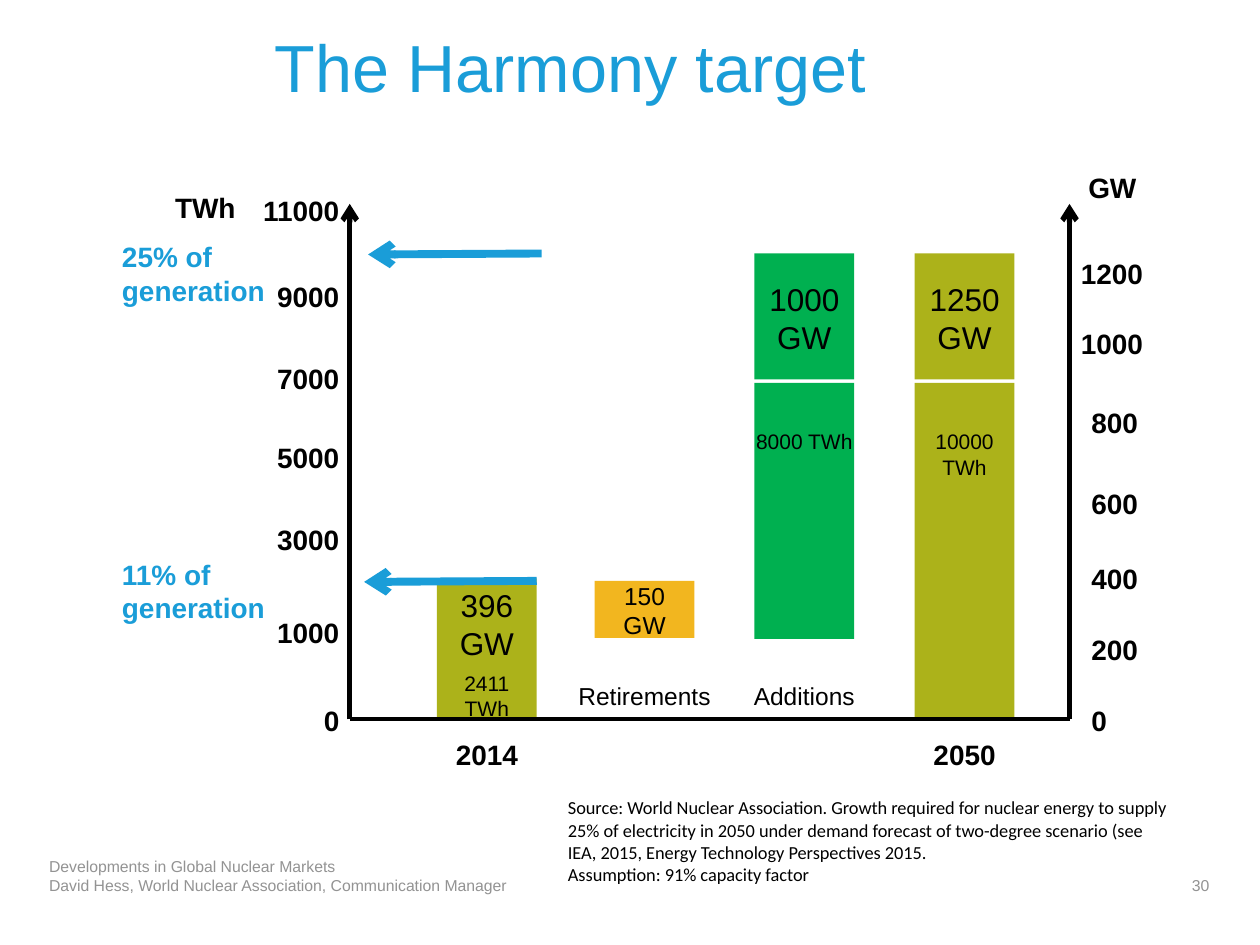
import pptx
import pptx.util
import pptx.dml.color
import pptx.enum.shapes
import pptx.enum.text
import pptx.oxml.ns
from lxml import etree
from pptx.util import Cm, Pt

ALIGN = pptx.enum.text.PP_ALIGN
ANCHOR = pptx.enum.text.MSO_ANCHOR

COLOURS = {"sky": "1A9DD8", "olive": "ACB21A", "green": "00B050",
           "amber": "F2B61F", "black": "000000", "grey": "939393"}
STYLES = {
    "title": ({"name": "Arial", "size": Pt(38)}, "sky"),
    "axis": ({"name": "Arial", "size": Pt(16), "bold": True}, "black"),
    "share": ({"name": "Arial", "size": Pt(16), "bold": True}, "sky"),
    "capacity": ({"name": "Arial", "size": Pt(18)}, "black"),
    "energy": ({"name": "Arial", "size": Pt(12)}, "black"),
    "step": ({"name": "Arial", "size": Pt(14)}, "black"),
    "source": ({"name": "Calibri", "size": Pt(10.5)}, "black"),
    "footer": ({"name": "Arial", "size": Pt(9)}, "grey"),
}

# All lengths below are in centimetres.
AXIS_LEFT, AXIS_RIGHT, AXIS_TOP, BASELINE = 7.05, 21.56, 4.11, 14.5
BAR_WIDTH, LABEL_WIDTH, LABEL_HEIGHT, LABEL_INSET = 2.01, 2.44, 2.0, 0.2
STEP_WIDTH, STEP_TOP = 3.81, 13.72

# Bar pieces are (top, bottom); label lines are (text, style, points before).
BARS = [
    {"left": 8.81, "colour": "olive", "pieces": [(11.66, BASELINE)],
     "year": "2014", "label_top": 11.68,
     "label": [("396", "capacity", 0), ("GW", "capacity", 0),
               ("2411", "energy", 5), ("TWh", "energy", 0)]},
    {"left": 11.99, "colour": "amber", "pieces": [(11.71, 12.86)],
     "step": "Retirements", "label_top": 11.58,
     "label": [("150", "step", 0), ("GW", "step", 0)]},
    {"left": 15.21, "colour": "green", "pieces": [(5.11, 7.65), (7.72, 12.88)],
     "step": "Additions", "label_top": 5.51,
     "label": [("1000", "capacity", 0), ("GW", "capacity", 0),
               ("8000 TWh", "energy", 42)]},
    {"left": 18.44, "colour": "olive", "pieces": [(5.11, 7.65), (7.72, BASELINE)],
     "year": "2050", "label_top": 5.51,
     "label": [("1250", "capacity", 0), ("GW", "capacity", 0),
               ("10000 TWh", "energy", 42)]},
]
TWH_TICKS = [("11000", 3.78), ("9000", 5.51), ("7000", 7.16), ("5000", 8.76),
             ("3000", 10.41), ("1000", 12.27), ("0", 14.05)]
GW_TICKS = [("1200", 5.05), ("1000", 6.45), ("800", 8.05), ("600", 9.68),
            ("400", 11.2), ("200", 12.62), ("0", 14.05)]
AXIS_UNITS = [("TWh", 3.28, 3.71), ("GW", 21.69, 3.3)]
SHARES = [("25% of generation", 4.7, (10.92, 5.11), (7.42, 5.13)),
          ("11% of generation", 11.1, (10.82, 11.71), (7.34, 11.73))]
SOURCE = [
    "Source: World Nuclear Association. Growth required for nuclear energy to "
    "supply 25% of electricity in 2050 under demand forecast of two-degree "
    "scenario (see IEA, 2015, Energy Technology Perspectives 2015.",
    "Assumption: 91% capacity factor",
]
FOOTER = ["Developments in Global Nuclear Markets",
          "David Hess, World Nuclear Association, Communication Manager"]


def rgb(colour):
    return pptx.dml.color.RGBColor.from_string(COLOURS[colour])


def add_text(slide, lines, left, top, width, height, align=ALIGN.LEFT,
             anchor=ANCHOR.TOP, inset_x=0.25, inset_y=0.13):
    """Add a text box from (text, style, points before) lines."""
    box = slide.shapes.add_textbox(Cm(left), Cm(top), Cm(width), Cm(height))
    frame = box.text_frame
    frame_format = {"word_wrap": True, "vertical_anchor": anchor,
                    "margin_left": Cm(inset_x), "margin_right": Cm(inset_x),
                    "margin_top": Cm(inset_y), "margin_bottom": Cm(inset_y)}
    for key, value in frame_format.items():
        setattr(frame, key, value)
    for number, (text, style, before) in enumerate(lines):
        paragraph = frame.add_paragraph() if number else frame.paragraphs[0]
        paragraph.alignment = align
        if before:
            paragraph.space_before = Pt(before)
        run = paragraph.add_run()
        run.text = text
        font_format, colour = STYLES[style]
        for key, value in font_format.items():
            setattr(run.font, key, value)
        run.font.color.rgb = rgb(colour)


def add_bar(slide, left, top, bottom, colour):
    bar = slide.shapes.add_shape(pptx.enum.shapes.MSO_SHAPE.RECTANGLE, Cm(left),
                                 Cm(top), Cm(BAR_WIDTH), Cm(bottom - top))
    bar.shadow.inherit = False
    bar.fill.solid()
    bar.fill.fore_color.rgb = rgb(colour)
    bar.line.fill.background()


def add_line(slide, start, end, colour, points, arrow=True):
    line = slide.shapes.add_connector(
        pptx.enum.shapes.MSO_CONNECTOR.STRAIGHT, *map(Cm, start + end))
    line.line.color.rgb = rgb(colour)
    line.line.width = Pt(points)
    qn = pptx.oxml.ns.qn
    if arrow:
        etree.SubElement(line.line._get_or_add_ln(), qn("a:tailEnd"), type="arrow")
    etree.SubElement(line._element.spPr, qn("a:effectLst"))


def add_axes(slide):
    for x in (AXIS_LEFT, AXIS_RIGHT):
        add_line(slide, (x, BASELINE), (x, AXIS_TOP), "black", 3)
    add_line(slide, (AXIS_LEFT, BASELINE), (AXIS_RIGHT, BASELINE), "black", 2.25,
             arrow=False)
    for unit, left, top in AXIS_UNITS:
        add_text(slide, [(unit, "axis", 0)], left, top, 2.13, 0.94)
    for tick, top in TWH_TICKS:
        add_text(slide, [(tick, "axis", 0)], 4.58, top, 2.51, 0.94, ALIGN.RIGHT)
    for tick, top in GW_TICKS:
        left = 21.54 if len(tick) == 4 else 21.75
        add_text(slide, [(tick, "axis", 0)], left, top, 2.01, 0.94)


def add_bar_captions(slide, bar):
    centre = bar["left"] + BAR_WIDTH / 2
    add_text(slide, bar["label"], centre - LABEL_WIDTH / 2, bar["label_top"],
             LABEL_WIDTH, LABEL_HEIGHT, ALIGN.CENTER, inset_x=LABEL_INSET)
    if "year" in bar:
        add_text(slide, [(bar["year"], "axis", 0)], bar["left"], 14.73,
                 BAR_WIDTH, 0.94, ALIGN.CENTER)
    if "step" in bar:
        add_text(slide, [(bar["step"], "step", 0)], centre - STEP_WIDTH / 2,
                 STEP_TOP, STEP_WIDTH, 0.61, ALIGN.CENTER, inset_x=0, inset_y=0)


def main():
    deck = pptx.Presentation()
    deck.slide_width, deck.slide_height = Cm(25.4), Cm(19.05)
    slide = deck.slides.add_slide(deck.slide_layouts[6])

    add_text(slide, [("The Harmony target", "title", 0)], 5.54, 0.53, 18.49, 3.07,
             inset_x=0, inset_y=0)
    for bar in BARS:
        for top, bottom in bar["pieces"]:
            add_bar(slide, bar["left"], top, bottom, bar["colour"])
    add_axes(slide)
    for share, top, start, end in SHARES:
        add_text(slide, [(share, "share", 0)], 2.21, top, 3.4, 1.63)
        add_line(slide, start, end, "sky", 4.5)
    for bar in BARS:
        add_bar_captions(slide, bar)

    add_text(slide, [(line, "source", 0) for line in SOURCE], 11.2, 15.93, 12.7, 2.06)
    add_text(slide, [(line, "footer", 0) for line in FOOTER], 0.99, 17.04, 19.99, 0.99,
             anchor=ANCHOR.BOTTOM, inset_x=0, inset_y=0)
    add_text(slide, [("30", "footer", 0)], 23.39, 17.04, 0.99, 0.99, ALIGN.RIGHT,
             ANCHOR.BOTTOM, inset_x=0, inset_y=0)
    deck.save("out.pptx")


if __name__ == "__main__":
    main()
